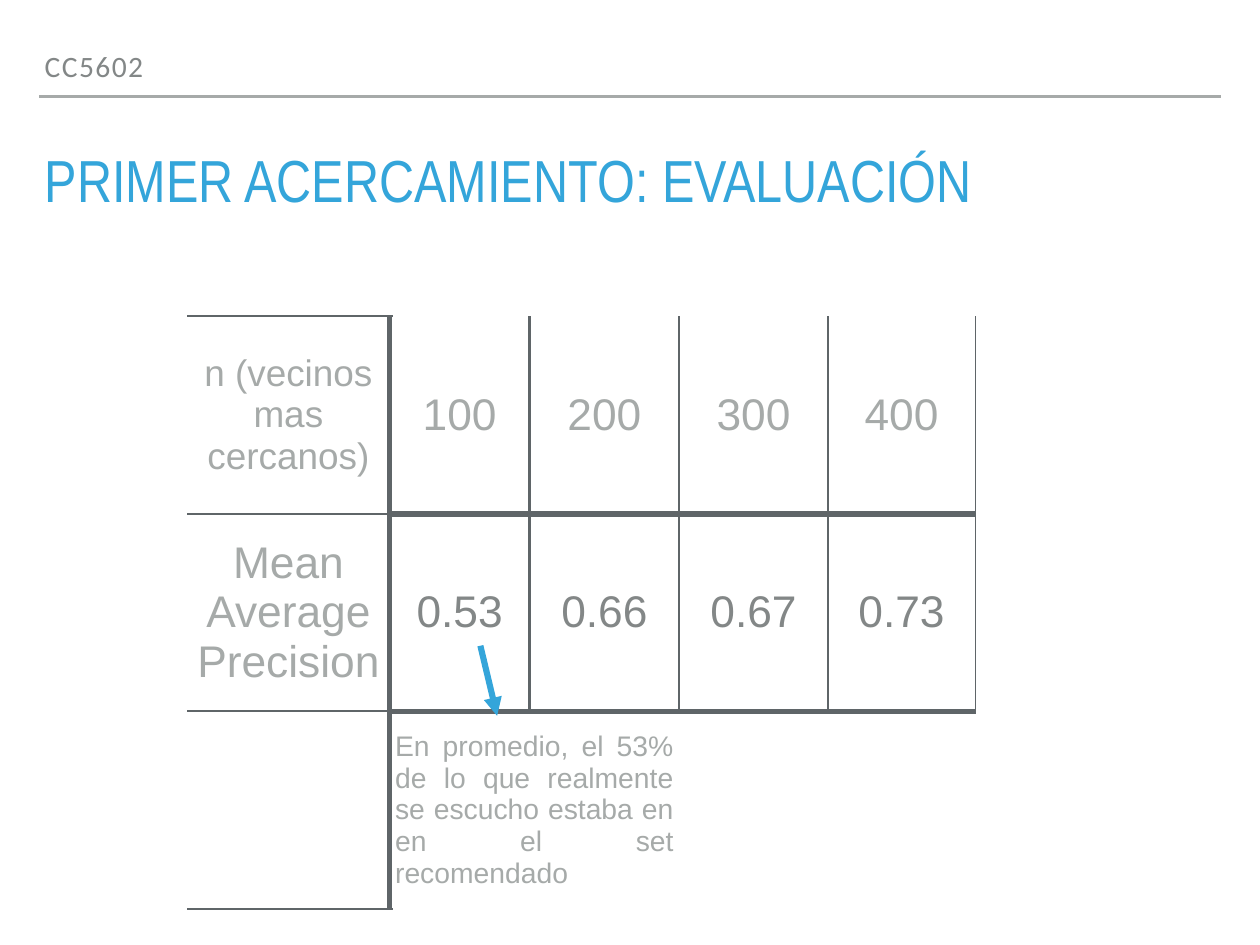
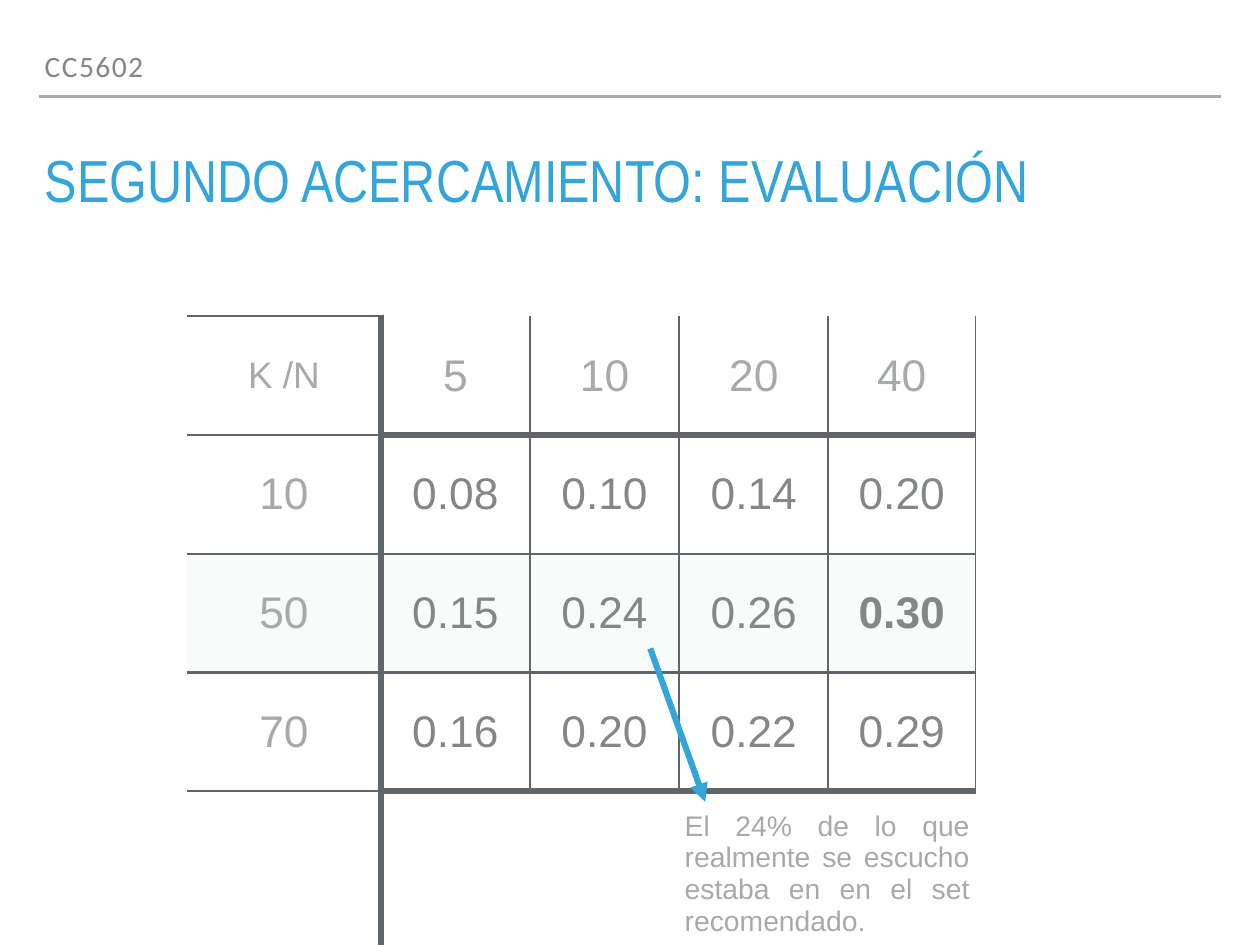
from lxml import etree
from pptx import Presentation
from pptx import util as u
from pptx.dml.color import RGBColor
from pptx.enum import shapes, text
from pptx.oxml import ns

BLUE = RGBColor(0x34, 0xA5, 0xDA)
LIGHT_GRAY = RGBColor(0xA6, 0xAA, 0xA9)
DARK_GRAY = RGBColor(0x83, 0x87, 0x87)
SLATE = RGBColor(0x5F, 0x65, 0x68)
TINT = RGBColor(0xF9, 0xFA, 0xFA)

UNIT = u.Inches(2 / 9)
GRID_COLUMNS, GRID_ROWS = 64, 48
MARGIN = 2
INSET = u.Inches(0.06)
THICK, MEDIUM, THIN, NONE = 5, 2, 1, 0


def grid(*lengths):
    return [u.Emu(round(length * UNIT)) for length in lengths]


def add_xml(parent, tag, **attributes):
    return etree.SubElement(parent, ns.qn(tag), attributes)


class Deck:
    def __init__(self):
        self.presentation = Presentation()
        self.presentation.slide_width, self.presentation.slide_height = grid(GRID_COLUMNS, GRID_ROWS)
        self.slide = None

    def start(self, title):
        self.slide = self.presentation.slides.add_slide(self.presentation.slide_layouts[1])
        self.line((MARGIN, 4.9), (GRID_COLUMNS - MARGIN, 4.9), LIGHT_GRAY, MEDIUM)
        self.heading(self.slide.placeholders[1], "CC5602", (MARGIN, 2.25, 55, 2.25),
                     "Calibri", 24, DARK_GRAY, spacing=120)
        self.heading(self.slide.shapes.title, title, (MARGIN, 7.56, 60, 3.56),
                     "Arial Narrow", 48.2, BLUE)

    def heading(self, placeholder, words, box, font, size, color, spacing=0):
        placeholder.left, placeholder.top, placeholder.width, placeholder.height = grid(*box)
        frame = placeholder.text_frame
        frame.text = words
        frame.word_wrap = True
        frame.auto_size = text.MSO_AUTO_SIZE.NONE
        frame.vertical_anchor = text.MSO_ANCHOR.BOTTOM
        frame.margin_left = frame.margin_right = frame.margin_top = frame.margin_bottom = INSET
        paragraph = frame.paragraphs[0]
        paragraph.line_spacing = 0.8
        paragraph.space_before = u.Pt(0)
        self.style(paragraph, text.PP_ALIGN.LEFT, font, size, color)
        properties = paragraph._p.get_or_add_pPr()
        properties.set("marL", "0")
        properties.set("indent", "0")
        add_xml(properties, "a:buNone")
        if spacing:
            paragraph.runs[0]._r.get_or_add_rPr().set("spc", str(spacing))

    def style(self, paragraph, alignment, font, size, color, bold=False):
        paragraph.alignment = alignment
        for run in paragraph.runs:
            run.font.name = font
            run.font.size = u.Pt(size)
            run.font.bold = bold
            run.font.color.rgb = color

    def line(self, start, end, color, width, arrow=False):
        connector = self.slide.shapes.add_connector(
            shapes.MSO_CONNECTOR.STRAIGHT, *grid(*start, *end))
        connector.line.color.rgb = color
        connector.line.width = u.Pt(width)
        if arrow:
            add_xml(connector.line._get_or_add_ln(), "a:tailEnd", type="triangle")
        add_xml(connector._element.spPr, "a:effectLst")

    def border(self, cell, side, width):
        edge = add_xml(cell._tc.get_or_add_tcPr(), "a:ln" + side, w=str(u.Pt(width)))
        if width:
            fill = add_xml(edge, "a:solidFill")
            add_xml(fill, "a:srgbClr", val=str(SLATE))
        else:
            add_xml(edge, "a:noFill")

    def cell_text(self, cell, words, size, color, alignment=text.PP_ALIGN.CENTER, bold=False):
        cell.text = words
        self.style(cell.text_frame.paragraphs[0], alignment, "Arial", size, color, bold)

    def results(self, values, widths, heights, note, note_column, tinted_row=None, best=None):
        row_count, column_count = len(heights), len(widths)
        note_row = row_count - 1

        def horizontal(row, column):
            if column == 0:
                return MEDIUM
            if row in (0, row_count):
                return NONE
            return THICK if row in (1, note_row) else MEDIUM

        def vertical(row, column):
            if column == 1:
                return THICK
            if column == 0 or row == note_row:
                return NONE
            return THIN if column == column_count else MEDIUM

        table = self.slide.shapes.add_table(
            row_count, column_count, *grid(9.5, 16.07, sum(widths), sum(heights))).table
        table.first_row = table.horz_banding = False
        for column, width in zip(table.columns, grid(*widths)):
            column.width = width
        for row, height in zip(table.rows, grid(*heights)):
            row.height = height

        for r in range(row_count):
            for c in range(column_count):
                cell = table.cell(r, c)
                cell.vertical_anchor = text.MSO_ANCHOR.MIDDLE
                cell.margin_left = cell.margin_right = INSET
                cell.margin_top = cell.margin_bottom = INSET
                self.border(cell, "L", vertical(r, c))
                self.border(cell, "R", vertical(r, c + 1))
                self.border(cell, "T", horizontal(r, c))
                self.border(cell, "B", horizontal(r + 1, c))
                if r == tinted_row:
                    cell.fill.solid()
                    cell.fill.fore_color.rgb = TINT
                else:
                    cell.fill.background()
                if r < note_row:
                    self.cell_text(cell, values[r][c], 30 if r == c == 0 else 36,
                                   DARK_GRAY if r and c else LIGHT_GRAY, bold=(r, c) == best)

        note_cell = table.cell(note_row, note_column)
        note_cell.merge(table.cell(note_row, note_column + 1))
        self.cell_text(note_cell, note, 23, LIGHT_GRAY, text.PP_ALIGN.JUSTIFY)


def main():
    deck = Deck()

    deck.start("PRIMER ACERCAMIENTO: EVALUACIÓN")
    deck.results(
        [["n (vecinos mas cercanos)", "100", "200", "300", "400"],
         ["Mean Average Precision", "0.53", "0.66", "0.67", "0.73"]],
        widths=[10.3, 7.1, 7.6, 7.56, 7.47],
        heights=[10.03] * 3,
        note="En promedio, el 53% de lo que realmente se escucho estaba en en el set recomendado",
        note_column=1)
    deck.line((24.4, 32.8), (25.25, 36.36), BLUE, THICK, arrow=True)

    deck.start("SEGUNDO ACERCAMIENTO: EVALUACIÓN")
    deck.results(
        [["K /N", "5", "10", "20", "40"],
         ["10", "0.08", "0.10", "0.14", "0.20"],
         ["50", "0.15", "0.24", "0.26", "0.30"],
         ["70", "0.16", "0.20", "0.22", "0.29"]],
        widths=[9.85, 7.56, 7.6, 7.56, 7.47],
        heights=[6.03] * 4 + [8.4],
        note="El 24% de lo que realmente se escucho estaba en en el set recomendado.",
        note_column=3, tinted_row=2, best=(2, 4))
    deck.line((33.03, 32.94), (35.82, 40.73), BLUE, THICK, arrow=True)

    deck.presentation.save("out.pptx")


if __name__ == "__main__":
    main()
